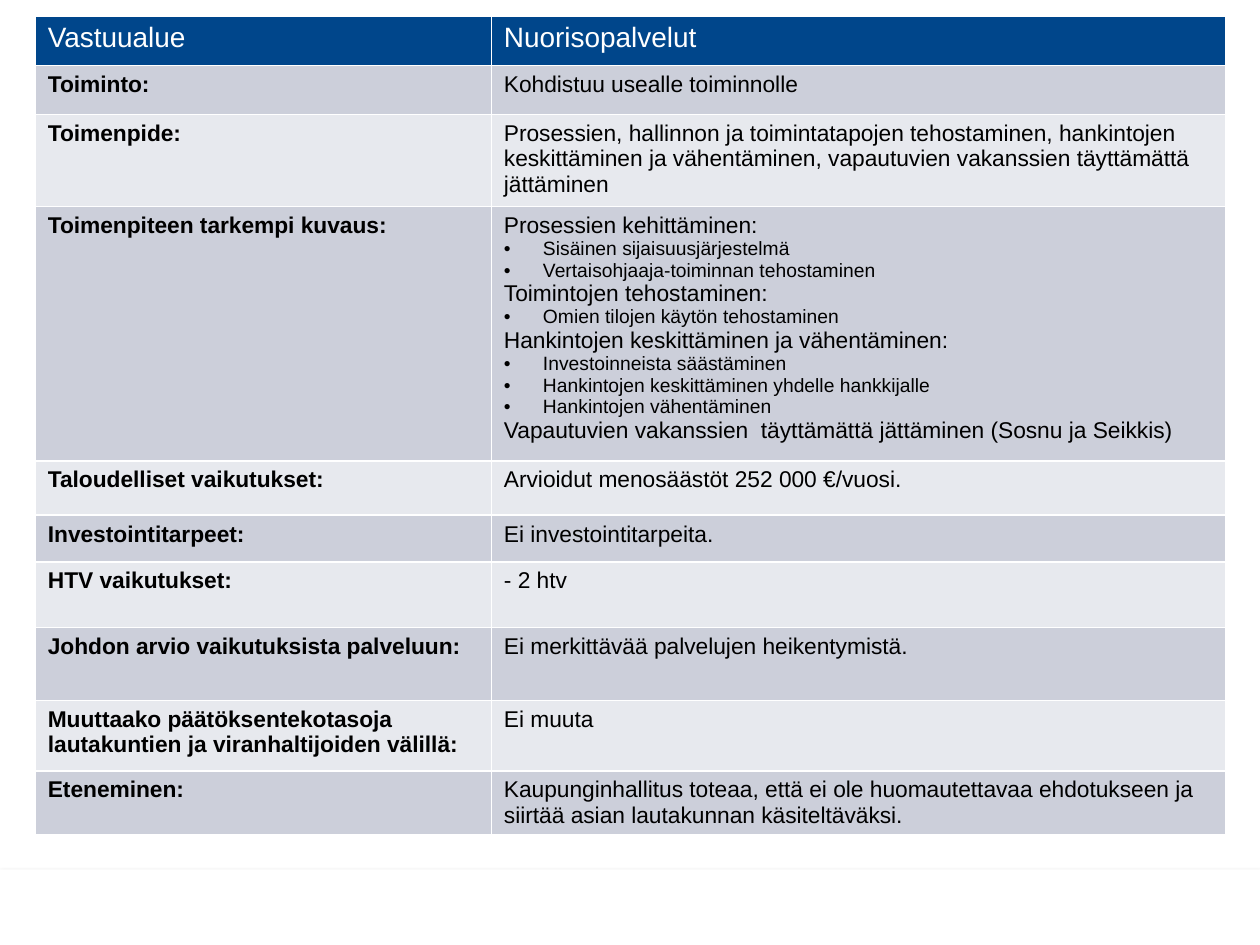
import pptx
import pptx.dml.color
import pptx.enum.shapes
import pptx.oxml
import pptx.oxml.ns
import pptx.util
from lxml import etree

Inches = pptx.util.Inches
Pt = pptx.util.Pt
RGBColor = pptx.dml.color.RGBColor
qn = pptx.oxml.ns.qn

NAVY = RGBColor(0x00, 0x46, 0x8B)
DARK_BAND = RGBColor(0xCC, 0xCF, 0xDA)
LIGHT_BAND = RGBColor(0xE7, 0xE9, 0xEE)
WHITE = RGBColor(0xFF, 0xFF, 0xFF)
BLACK = RGBColor(0x00, 0x00, 0x00)

FONT = "Arial"
BULLET = "• "  # marks a bulleted line in the row texts
COL_WIDTHS = [3.62, 5.83]

# Row height, label, lines of the answer
ROWS = [
    (0.39, "Vastuualue", ["Nuorisopalvelut"]),
    (0.39, "Toiminto:", ["Kohdistuu usealle toiminnolle"]),
    (0.73, "Toimenpide:", [
        "Prosessien, hallinnon ja toimintatapojen tehostaminen, hankintojen "
        "keskittäminen ja vähentäminen, vapautuvien vakanssien täyttämättä "
        "jättäminen"]),
    (2.02, "Toimenpiteen tarkempi kuvaus:", [
        "Prosessien kehittäminen:",
        "• Sisäinen sijaisuusjärjestelmä",
        "• Vertaisohjaaja-toiminnan tehostaminen",
        "Toimintojen tehostaminen:",
        "• Omien tilojen käytön tehostaminen",
        "Hankintojen keskittäminen ja vähentäminen:",
        "• Investoinneista säästäminen",
        "• Hankintojen keskittäminen yhdelle hankkijalle",
        "• Hankintojen vähentäminen",
        "Vapautuvien vakanssien  täyttämättä jättäminen (Sosnu ja Seikkis)"]),
    (0.43, "Taloudelliset vaikutukset:",
     ["Arvioidut menosäästöt 252 000 €/vuosi."]),
    (0.37, "Investointitarpeet:", ["Ei investointitarpeita."]),
    (0.52, "HTV vaikutukset:", ["- 2 htv"]),
    (0.58, "Johdon arvio vaikutuksista palveluun:",
     ["Ei merkittävää palvelujen heikentymistä."]),
    (0.56, "Muuttaako päätöksentekotasoja lautakuntien ja viranhaltijoiden "
           "välillä:", ["Ei muuta"]),
    (0.5, "Eteneminen:", [
        "Kaupunginhallitus toteaa, että ei ole huomautettavaa ehdotukseen ja "
        "siirtää asian lautakunnan käsiteltäväksi."]),
]


def add_footer_band(s):
    """White band along the bottom edge with a soft shadow."""
    sp = s.shapes.add_shape(pptx.enum.shapes.MSO_SHAPE.RECTANGLE,
                            0, Inches(6.9), Inches(10), Inches(0.6))
    sp.fill.solid()
    sp.fill.fore_color.rgb = WHITE
    sp.line.fill.background()
    sp.shadow.inherit = False
    effects = sp.element.spPr.find(qn("a:effectLst"))
    shadow = etree.SubElement(effects, qn("a:outerShdw"), blurRad=str(Pt(3.1)),
                              dist=str(Pt(1.8)), dir="5400000", rotWithShape="0")
    color = etree.SubElement(shadow, qn("a:srgbClr"), val=str(BLACK))
    etree.SubElement(color, qn("a:alpha"), val="35000")


def set_borders(cell):
    """Thin white line on all four sides."""
    tcPr = cell._tc.get_or_add_tcPr()
    for side in ("lnL", "lnR", "lnT", "lnB"):
        ln = etree.SubElement(tcPr, qn(f"a:{side}"), w=str(Pt(1)))
        fill = etree.SubElement(ln, qn("a:solidFill"))
        etree.SubElement(fill, qn("a:srgbClr"), val=str(WHITE))


def add_bullet(p):
    pPr = p._p.get_or_add_pPr()
    pPr.set("marL", str(Inches(0.31)))
    pPr.set("indent", str(-Inches(0.31)))
    etree.SubElement(pPr, qn("a:buFont"), typeface=FONT)
    etree.SubElement(pPr, qn("a:buChar"), char=BULLET.strip())


def fill_cell(cell, lines, fill, color, size, bold):
    set_borders(cell)
    cell.fill.solid()
    cell.fill.fore_color.rgb = fill
    tf = cell.text_frame
    for i, line in enumerate(lines):
        p = tf.paragraphs[0] if i == 0 else tf.add_paragraph()
        p.text = line.removeprefix(BULLET)
        bulleted = line.startswith(BULLET)
        if bulleted:
            add_bullet(p)
        for r in p.runs:
            r.font.name = FONT
            r.font.size = Pt(11 if bulleted else size)
            r.font.bold = bold
            r.font.color.rgb = color


def add_summary_table(s):
    height = sum(row[0] for row in ROWS)
    table = s.shapes.add_table(len(ROWS), len(COL_WIDTHS), Inches(0.28),
                               Inches(0.13), Inches(sum(COL_WIDTHS)),
                               Inches(height)).table
    for column, width in zip(table.columns, COL_WIDTHS):
        column.width = Inches(width)
    for i, (row_height, label, answer) in enumerate(ROWS):
        table.rows[i].height = Inches(row_height)
        header = i == 0
        band = DARK_BAND if i % 2 else LIGHT_BAND
        fill, color, size = (NAVY, WHITE, 16) if header else (band, BLACK, 13)
        fill_cell(table.cell(i, 0), [label], fill, color, size, not header)
        fill_cell(table.cell(i, 1), answer, fill, color, size, False)


def main():
    prs = pptx.Presentation()
    prs.slide_width, prs.slide_height = Inches(10), Inches(7.5)
    s = prs.slides.add_slide(prs.slide_layouts[6])
    add_footer_band(s)
    add_summary_table(s)
    prs.save("out.pptx")


if __name__ == "__main__":
    main()
